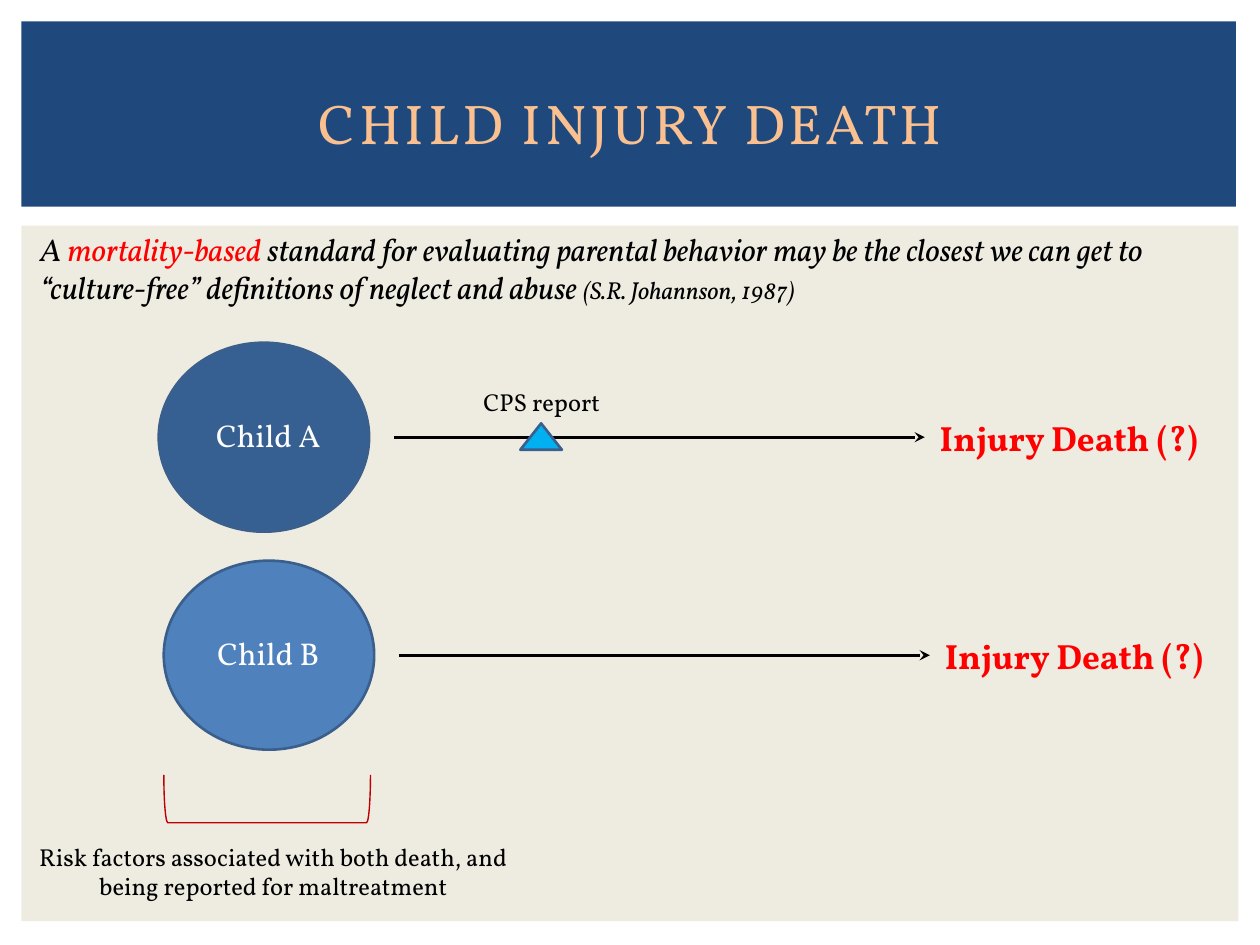
from lxml.etree import SubElement
from pptx import Presentation
from pptx.dml.color import RGBColor
from pptx.enum.shapes import MSO_CONNECTOR, MSO_SHAPE
from pptx.enum.text import MSO_ANCHOR, PP_ALIGN
from pptx.oxml.ns import qn
from pptx.util import Inches, Pt

COLORS = {
    "navy": "1F497D", "beige": "EEECE1", "peach": "FAC090", "dark_blue": "376092",
    "blue": "4F81BD", "outline": "3A5F8C", "sky": "00B0F0", "bracket": "C00000",
    "red": "FF0000", "black": "000000", "white": "FFFFFF",
}
FONT = "Vollkorn"
TITLE = "CHILD INJURY DEATH"
PANELS = [((0.17, 1.79, 9.66, 5.52), "beige"), ((0.17, 0.17, 9.64, 1.47), "navy")]
QUOTE = [
    ("A ", {}),
    ("mortality-based", {"color": "red"}),
    (" standard for evaluating parental behavior may be the closest we can get to "
     "“culture-free” definitions of neglect and abuse ", {}),
    ("(S.R. Johannson, 1987)", {"size": 14}),
]
CHILDREN = [
    {"name": "Child A", "fill": "dark_blue", "shift": 0, "middle": 3.47},
    {"name": "Child B", "fill": "blue", "shift": 0.04, "middle": 5.2},
]
OUTCOME = "Injury Death (?)"
REPORT = "CPS report"
RISK = "Risk factors associated with both death, and being reported for maltreatment"


def rgb(name):
    """Return the named colour."""
    return RGBColor.from_string(COLORS[name])


def write(shape, text, align=PP_ALIGN.LEFT, anchor=MSO_ANCHOR.TOP, spacing=None, **base):
    """Fill a shape with one paragraph given as a string or as formatted runs."""
    frame = shape.text_frame
    frame.word_wrap = True
    frame.vertical_anchor = anchor
    paragraph = frame.paragraphs[0]
    paragraph.alignment = align
    for content, changes in [(text, {})] if isinstance(text, str) else text:
        style = {"size": 18, "color": "black", "bold": False, "italic": False} | base | changes
        run = paragraph.add_run()
        run.text = content
        run.font.name = FONT
        run.font.size = Pt(style["size"])
        run.font.bold = style["bold"]
        run.font.italic = style["italic"]
        run.font.color.rgb = rgb(style["color"])
        if spacing:
            run.font._element.set("spc", str(spacing * 100))


def add_text(slide, box, text, **style):
    """Add a wrapped text box."""
    write(slide.shapes.add_textbox(*map(Inches, box)), text, **style)


def add_figure(slide, kind, box, fill=None, line=None, width=1.5):
    """Add a preset shape with a plain fill and outline."""
    shape = slide.shapes.add_shape(kind, *map(Inches, box))
    shape.shadow.inherit = False
    if fill:
        shape.fill.solid()
        shape.fill.fore_color.rgb = rgb(fill)
    else:
        shape.fill.background()
    if line:
        shape.line.color.rgb = rgb(line)
        shape.line.width = Pt(width)
    else:
        shape.line.fill.background()
    return shape


def add_arrow(slide, left, right, middle):
    """Add a horizontal arrow with a stealth head."""
    ends = map(Inches, (left, middle, right, middle))
    arrow = slide.shapes.add_connector(MSO_CONNECTOR.STRAIGHT, *ends)
    arrow.line.color.rgb = rgb("black")
    arrow.line.width = Pt(1.75)
    SubElement(arrow.line._get_or_add_ln(), qn("a:tailEnd"), type="stealth")
    SubElement(arrow.element.spPr, qn("a:effectLst"))


def add_child(slide, name, fill, shift, middle):
    """Add one row: circle, label, arrow and outcome."""
    circle = (1.26 + shift, middle - 0.75, 1.67, 1.5)
    add_figure(slide, MSO_SHAPE.OVAL, circle, fill, "outline")
    add_text(slide, (1.38, middle - 0.22, 1.5, 0.42), name,
             align=PP_ALIGN.CENTER, color="white")
    add_arrow(slide, 3.13 + shift, 7.34 + shift, middle)
    add_text(slide, (7.36 + shift, middle - 0.21, 2.44, 0.44), OUTCOME,
             size=20, color="red", bold=True)


def main():
    """Build and save the slide."""
    presentation = Presentation()
    presentation.slide_width, presentation.slide_height = Inches(10), Inches(7.5)
    slide = presentation.slides.add_slide(presentation.slide_layouts[5])

    for box, fill in PANELS:
        panel = add_figure(slide, MSO_SHAPE.RECTANGLE, box, fill)
    title = slide.shapes.title
    panel.element.addnext(title.element)
    title.left, title.top, title.width, title.height = map(Inches, (0.42, 0.39, 9.17, 1.15))
    write(title, TITLE, align=PP_ALIGN.CENTER, anchor=MSO_ANCHOR.MIDDLE,
          spacing=2, size=32, color="peach")

    for child in CHILDREN:
        add_child(slide, **child)

    bracket = add_figure(slide, MSO_SHAPE.RIGHT_BRACKET, (1.93, 5.52, 0.38, 1.64),
                         line="bracket", width=0.79)
    bracket.rotation = 90
    add_text(slide, (0.19, 6.63, 3.96, 0.57), RISK, align=PP_ALIGN.CENTER, size=14)
    add_figure(slide, MSO_SHAPE.ISOSCELES_TRIANGLE, (4.13, 3.36, 0.33, 0.21), "sky", "outline")
    add_text(slide, (3.58, 3.02, 1.44, 0.34), REPORT, align=PP_ALIGN.CENTER, size=14)
    add_text(slide, (0.22, 1.78, 9.61, 0.71), QUOTE, italic=True)

    presentation.save("out.pptx")


if __name__ == "__main__":
    main()
